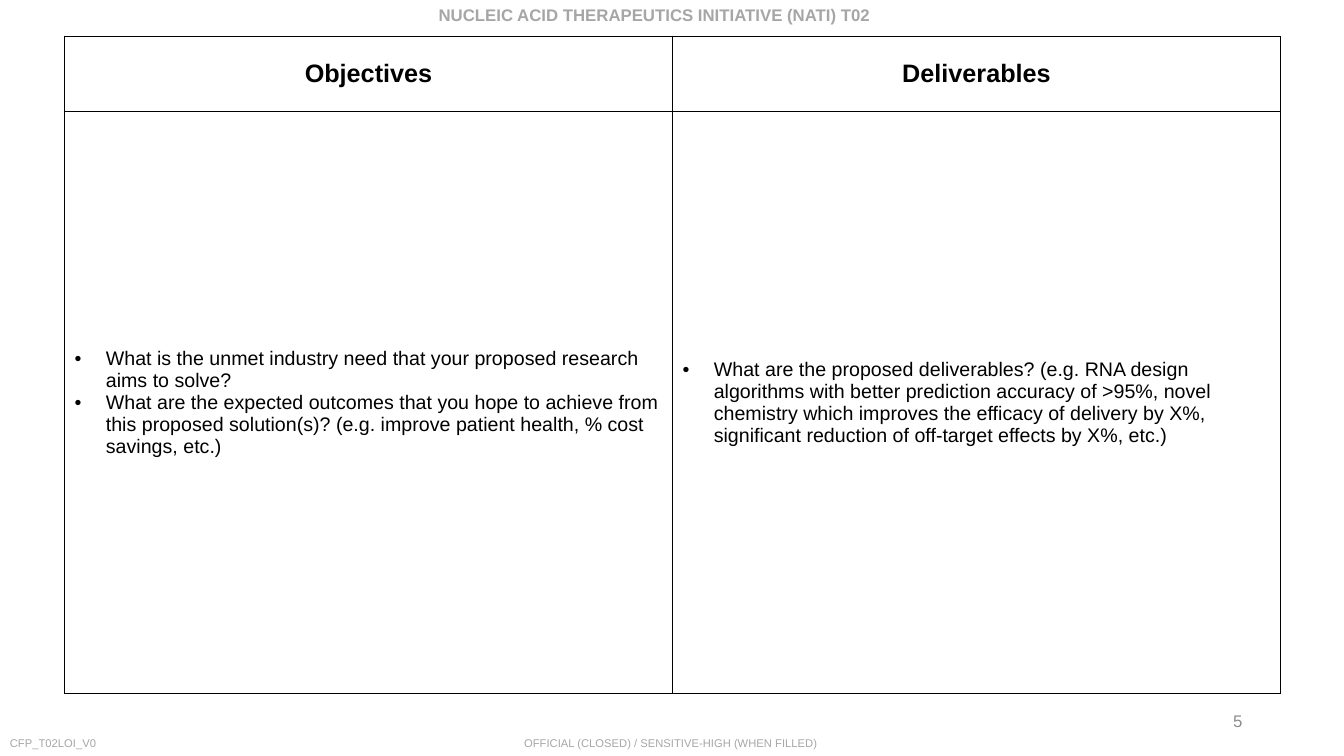
from lxml import etree
from pptx import Presentation
from pptx.dml.color import RGBColor
from pptx.enum.text import MSO_ANCHOR, PP_ALIGN
from pptx.oxml.ns import qn
from pptx.util import Pt

PX = 9144  # EMU per px, 100 px to the inch
BLACK = RGBColor(0x00, 0x00, 0x00)
PALE = RGBColor(0xA6, 0xA6, 0xA6)
GREY = RGBColor(0x8C, 0x8C, 0x8C)
LEFT, MID, RIGHT = PP_ALIGN.LEFT, PP_ALIGN.CENTER, PP_ALIGN.RIGHT
TOP, CENTRE = MSO_ANCHOR.TOP, MSO_ANCHOR.MIDDLE
HANG = 31  # bullet indent, px

HEADS = ["Objectives", "Deliverables"]
POINTS = [
    ["What is the unmet industry need that your proposed research aims to solve?",
     "What are the expected outcomes that you hope to achieve from this proposed "
     "solution(s)? (e.g. improve patient health, % cost savings, etc.)"],
    ["What are the proposed deliverables? (e.g. RNA design algorithms with better "
     "prediction accuracy of >95%, novel chemistry which improves the efficacy of "
     "delivery by X%, significant reduction of off-target effects by X%, etc.)"],
]


def write(frame, *lines, font="Arial", size=8, color=PALE, bold=False,
          align=LEFT, bullet=False):
    """Fill a text frame, one paragraph per line."""
    for i, line in enumerate(lines):
        para = frame.add_paragraph() if i else frame.paragraphs[0]
        para.alignment = align
        run = para.add_run()
        run.text = line
        run.font.name = font
        run.font.size = Pt(size)
        run.font.bold = bold
        run.font.color.rgb = color
        if bullet:
            props = para._p.get_or_add_pPr()
            props.set("marL", str(HANG * PX))
            props.set("indent", str(-HANG * PX))
            etree.SubElement(props, qn("a:buFont")).set("typeface", "Arial")
            etree.SubElement(props, qn("a:buChar")).set("char", "•")


class Page:
    def __init__(self, deck):
        self.slide = deck.slides.add_slide(deck.slide_layouts[5])
        self.edge = BLACK
        self.rule = Pt(1)

    def title(self, text, x, y, w, h, **style):
        shape = self.slide.shapes.title
        shape.left, shape.top, shape.width, shape.height = (
            v * PX for v in (x, y, w, h))
        shape.text_frame.word_wrap = True
        shape.text_frame.vertical_anchor = TOP
        write(shape.text_frame, text, **style)

    def text(self, text, x, y, w, h, wrap=True, anchor=TOP, **style):
        box = self.slide.shapes.add_textbox(*(v * PX for v in (x, y, w, h)))
        box.text_frame.word_wrap = wrap
        box.text_frame.vertical_anchor = anchor
        write(box.text_frame, text, **style)

    def border(self, cell):
        props = cell._tc.get_or_add_tcPr()
        for side in ("a:lnL", "a:lnR", "a:lnT", "a:lnB"):
            line = etree.SubElement(props, qn(side), w=str(self.rule))
            fill = etree.SubElement(line, qn("a:solidFill"))
            etree.SubElement(fill, qn("a:srgbClr"), val=str(self.edge))

    def table(self, x, y, cols, rows):
        size = (x, y, sum(cols), sum(rows))
        table = self.slide.shapes.add_table(
            len(rows), len(cols), *(v * PX for v in size)).table
        table.first_row = table.horz_banding = False
        for col, w in zip(table.columns, cols):
            col.width = w * PX
        for row, h in zip(table.rows, rows):
            row.height = h * PX
        for cell in table.iter_cells():
            self.border(cell)
            cell.fill.background()
            cell.vertical_anchor = CENTRE
        return table


def main():
    deck = Presentation()
    deck.slide_width, deck.slide_height = 1333 * PX, 750 * PX
    page = Page(deck)

    # Header
    page.title("NUCLEIC ACID THERAPEUTICS INITIATIVE (NATI) T02",
               425, 0, 484, 30, size=12, bold=True)

    # Objectives and deliverables
    table = page.table(64, 36, [603, 603], [75, 577])
    for i, (head, points) in enumerate(zip(HEADS, POINTS)):
        write(table.cell(0, i).text_frame, head,
              size=18, color=BLACK, bold=True, align=MID)
        write(table.cell(1, i).text_frame, *points,
              size=14, color=BLACK, bullet=True)

    # Footer
    page.text("OFFICIAL (CLOSED) / SENSITIVE-HIGH (WHEN FILLED)",
              510, 726, 314, 24, wrap=False)
    page.text("CFP_T02LOI_V0", 0, 726, 667, 24)
    page.text("5", 942, 695, 300, 40, anchor=CENTRE,
              size=12, color=GREY, align=RIGHT)

    deck.save("out.pptx")


if __name__ == "__main__":
    main()
